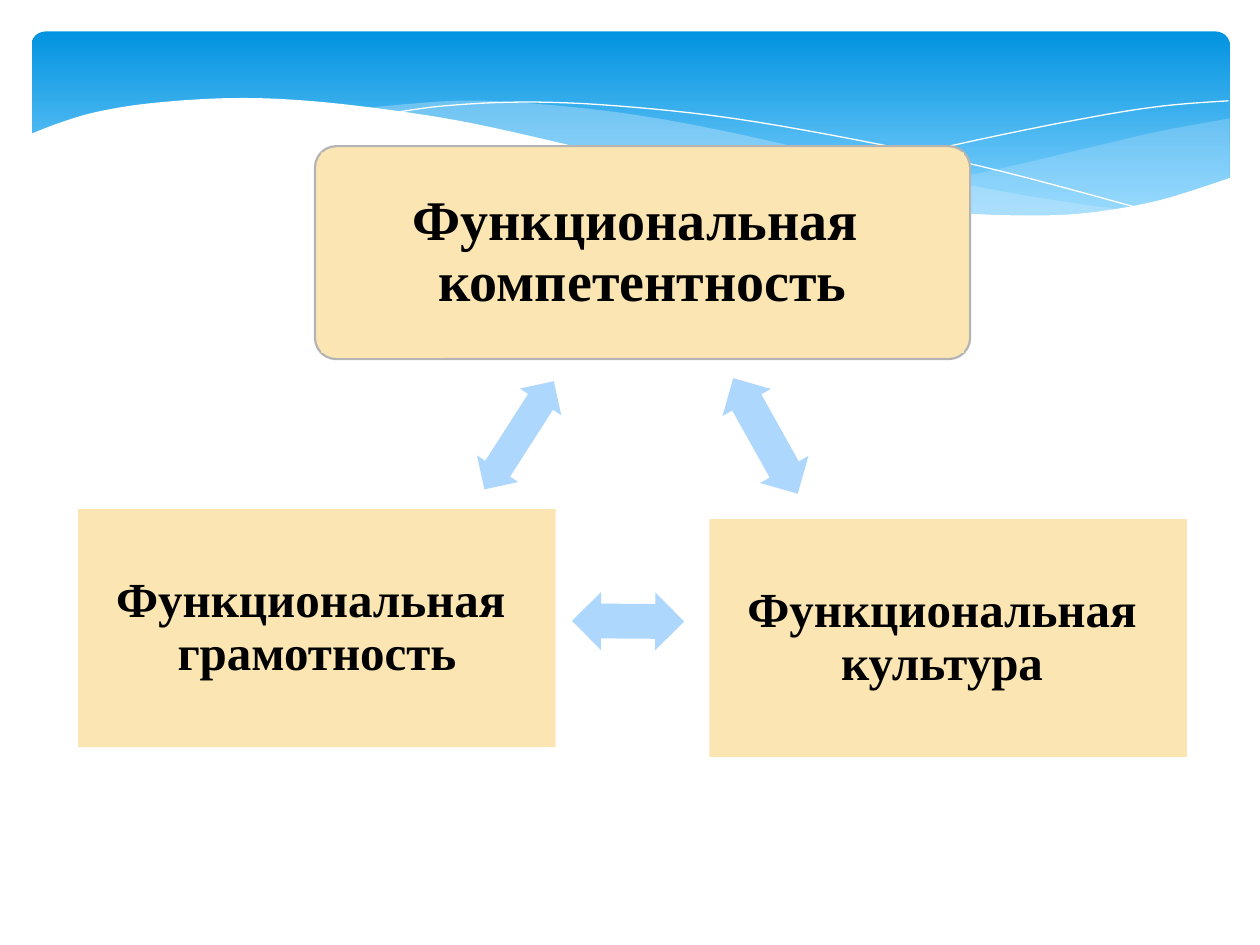
from dataclasses import dataclass

from lxml import etree
from pptx import Presentation
from pptx.dml.color import RGBColor
from pptx.enum.shapes import MSO_SHAPE
from pptx.enum.text import MSO_ANCHOR, PP_ALIGN
from pptx.oxml.ns import qn
from pptx.util import Inches, Pt

ROUNDED = MSO_SHAPE.ROUNDED_RECTANGLE
RECT = MSO_SHAPE.RECTANGLE
ARROW = MSO_SHAPE.LEFT_RIGHT_ARROW
CENTER = PP_ALIGN.CENTER
MIDDLE = MSO_ANCHOR.MIDDLE

# The grid has 100 columns and 75 rows of square cells
COLS, ROWS, CELL = 100, 75, Inches(0.1)
CURVE_STEPS = 6


@dataclass(frozen=True)
class Theme:
    font: str = "Times New Roman"
    title_size: int = 32
    box_size: int = 28
    text: str = "000000"
    box: str = "FBE6B3"
    border: str = "B4B4B4"
    arrow: str = "AED7FE"
    white: str = "FFFFFF"
    wave: str = "C6E7FC"
    sky_top: str = "0293E0"
    sky_bottom: str = "83D3FE"


THEME = Theme()


def rgb(value):
    return RGBColor.from_string(value)


def paint(sp, fill=None, line=None, width=0, alpha=None):
    """Set fill and outline; alpha is the opacity in percent."""
    sp.shadow.inherit = False
    if fill:
        sp.fill.solid()
        sp.fill.fore_color.rgb = rgb(fill)
        if alpha:
            color = sp.fill._xPr.find(qn("a:solidFill"))[0]
            etree.SubElement(color, qn("a:alpha"), val=str(alpha * 1000))
    else:
        sp.fill.background()
    if line:
        sp.line.color.rgb = rgb(line)
        sp.line.width = Pt(width)
    else:
        sp.line.fill.background()


def add_block(s, kind, box, fill, **style):
    sp = s.shapes.add_shape(kind, *(round(v * CELL) for v in box))
    paint(sp, fill, **style)
    return sp


def add_label(s, box, text, size, inset):
    """Filled rectangle with centred bold text."""
    sp = add_block(s, RECT, box, THEME.box)
    tf = sp.text_frame
    tf.word_wrap = True
    tf.vertical_anchor = MIDDLE
    tf.margin_left = tf.margin_right = Inches(inset)
    tf.margin_top = tf.margin_bottom = Inches(inset)
    p = tf.paragraphs[0]
    p.text = text
    p.alignment = CENTER
    p.line_spacing = 0.9
    p.space_after = Pt(round(size * 0.35))
    for r in p.runs:
        r.font.name = THEME.font
        r.font.size = Pt(size)
        r.font.bold = True
        r.font.color.rgb = rgb(THEME.text)


def add_arrow(s, box, angle):
    sp = add_block(s, ARROW, box, THEME.arrow)
    sp.adjustments[0], sp.adjustments[1] = 0.6, 0.5
    sp.rotation = angle


def curve(*knots):
    """Points of a smooth Catmull-Rom curve through the knots."""
    ends = [knots[0], *knots, knots[-1]]
    points = [knots[0]]
    for a, b, c, d in zip(ends, ends[1:], ends[2:], ends[3:]):
        for step in range(1, CURVE_STEPS + 1):
            t = step / CURVE_STEPS
            points.append(tuple(
                (2 * q + (r - p) * t + (2 * p - 5 * q + 4 * r - u) * t ** 2
                 + (3 * q - p - 3 * r + u) * t ** 3) / 2
                for p, q, r, u in zip(a, b, c, d)))
    return points


def add_outline(s, points, close=True, **style):
    emu = [(x * CELL, y * CELL) for x, y in points]
    builder = s.shapes.build_freeform(*emu[0])
    builder.add_line_segments(emu[1:], close=close)
    paint(builder.convert_to_shape(), **style)


def add_banner(s):
    # Blue gradient panel
    sky = add_block(s, ROUNDED, (2.5, 2.5, 95.1, 15.6), THEME.sky_top)
    sky.adjustments[0] = 0.071
    sky.fill.gradient()
    sky.fill.gradient_angle = 270
    stops = sky.fill.gradient_stops
    for stop, color, position in zip(
            stops, (THEME.sky_top, THEME.sky_bottom), (0, 0.9)):
        stop.color.rgb = rgb(color)
        stop.position = position

    # Translucent waves
    right_wave = (
        curve((97.6, 9.4), (92.1, 10.4), (86.1, 11.8), (77.9, 13.7), (66.1, 16))
        + curve((66.1, 16), (73.2, 16.8), (80.3, 17.2), (87.2, 16.9),
                (92.8, 15.8), (97.6, 14.1)))
    middle_wave = (
        curve((89.3, 16.7), (80.7, 15.4), (70.6, 13.4), (62.9, 11.6),
              (55.5, 10), (48.9, 8.9), (42, 8.2), (36.1, 8), (28.6, 8.6))
        + curve((28.6, 8.6), (36.2, 9.7), (44.9, 11.6), (56.6, 14.3),
                (66.5, 16.1), (74.8, 17), (81.8, 17.3), (89.3, 16.7)))
    add_outline(s, right_wave, fill=THEME.wave, alpha=29)
    add_outline(s, middle_wave, fill=THEME.wave, alpha=40)

    # Thin white lines
    falling = curve((30.9, 9), (35.3, 8.4), (41.6, 8.1), (48.9, 8.4),
                    (58.2, 9.4), (69.5, 11.4), (79.5, 13.6), (90.7, 16.6))
    rising = curve((61.3, 15.1), (67.2, 13.5), (77.6, 11.1), (86.6, 9.3),
                   (92.4, 8.4), (97.5, 8))
    for line in (falling, rising):
        add_outline(s, line, close=False, line=THEME.white)

    # White lower edge
    edge = curve((97.7, 14.1), (92, 15.9), (86.3, 16.9), (80.9, 17.1),
                 (74.4, 16.8), (66.8, 16), (57.9, 14.4), (50.3, 12.8),
                 (44.7, 11.4), (36.5, 9.6), (29.2, 8.5), (23, 7.9),
                 (17.7, 7.8), (11.9, 8.2), (7.6, 8.9), (4.6, 9.8), (2.3, 10.7))
    add_outline(s, edge + [(2.3, 22.4), (97.7, 22.4)], fill=THEME.white)


def add_diagram(s):
    # Top box with rounded frame
    frame = add_block(s, ROUNDED, (25, 11.6, 52, 16.9), THEME.box,
                      line=THEME.border, width=1.25)
    frame.adjustments[0] = 0.1
    add_label(s, (25.5, 12.1, 51, 15.9), "Функциональная \vкомпетентность",
              THEME.title_size, 0.13)

    # Lower boxes
    for left, top, text in ((6.2, 40.4, "Функциональная \vграмотность"),
                            (56.3, 41.2, "Функциональная \vкультура ")):
        add_label(s, (left, top, 37.9, 18.9), text, THEME.box_size, 0.12)

    # Two-way arrows between the boxes
    for box, angle in (((55.5, 32.4, 10.5, 4.4), 60.8),
                       ((45.4, 47, 8.9, 4.6), 180.4),
                       ((36.1, 32.6, 10.2, 3.9), 302.7)):
        add_arrow(s, box, angle)


def main():
    prs = Presentation()
    prs.slide_width, prs.slide_height = COLS * CELL, ROWS * CELL
    s = prs.slides.add_slide(prs.slide_layouts[6])
    add_banner(s)
    add_diagram(s)
    prs.save("out.pptx")


if __name__ == "__main__":
    main()
